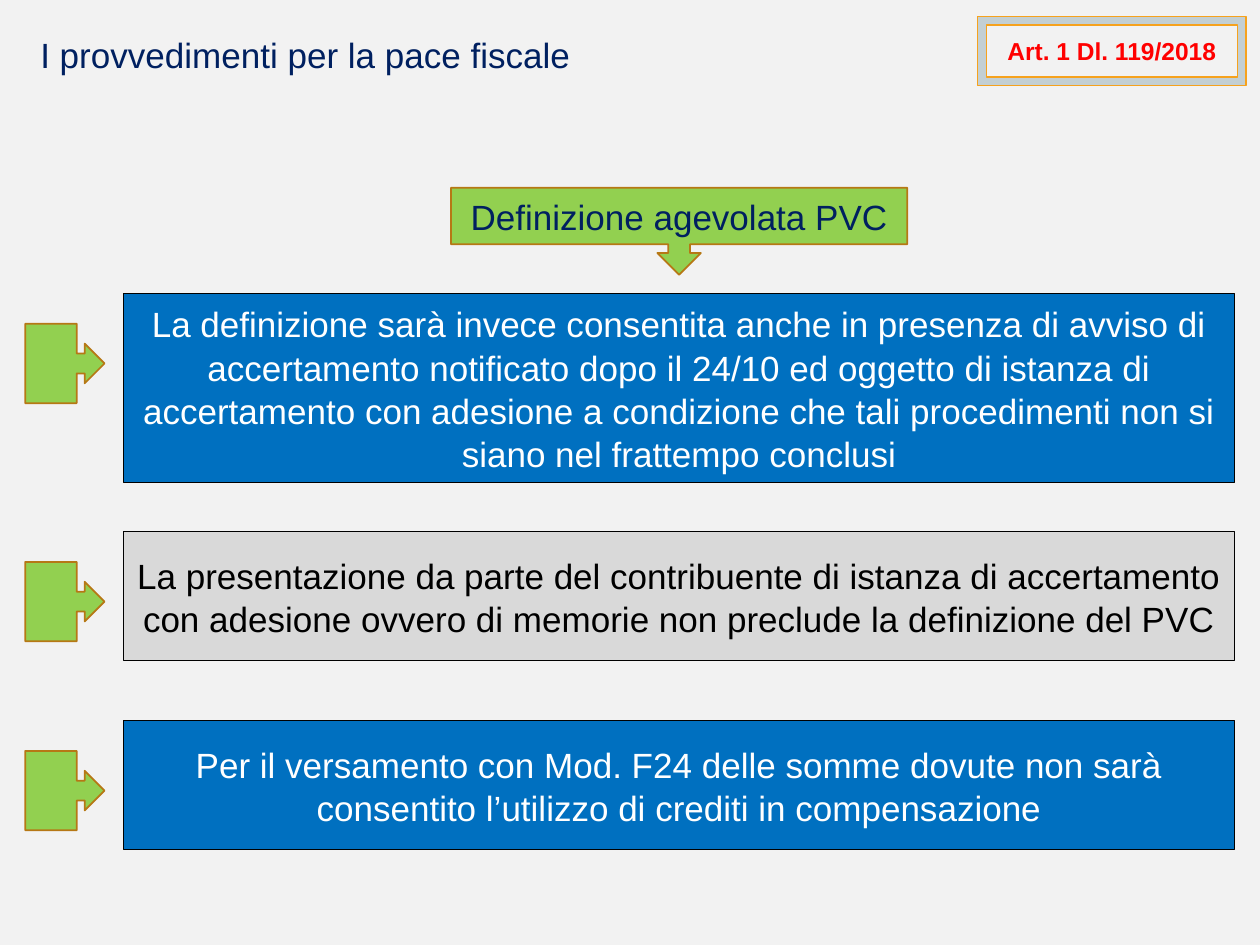
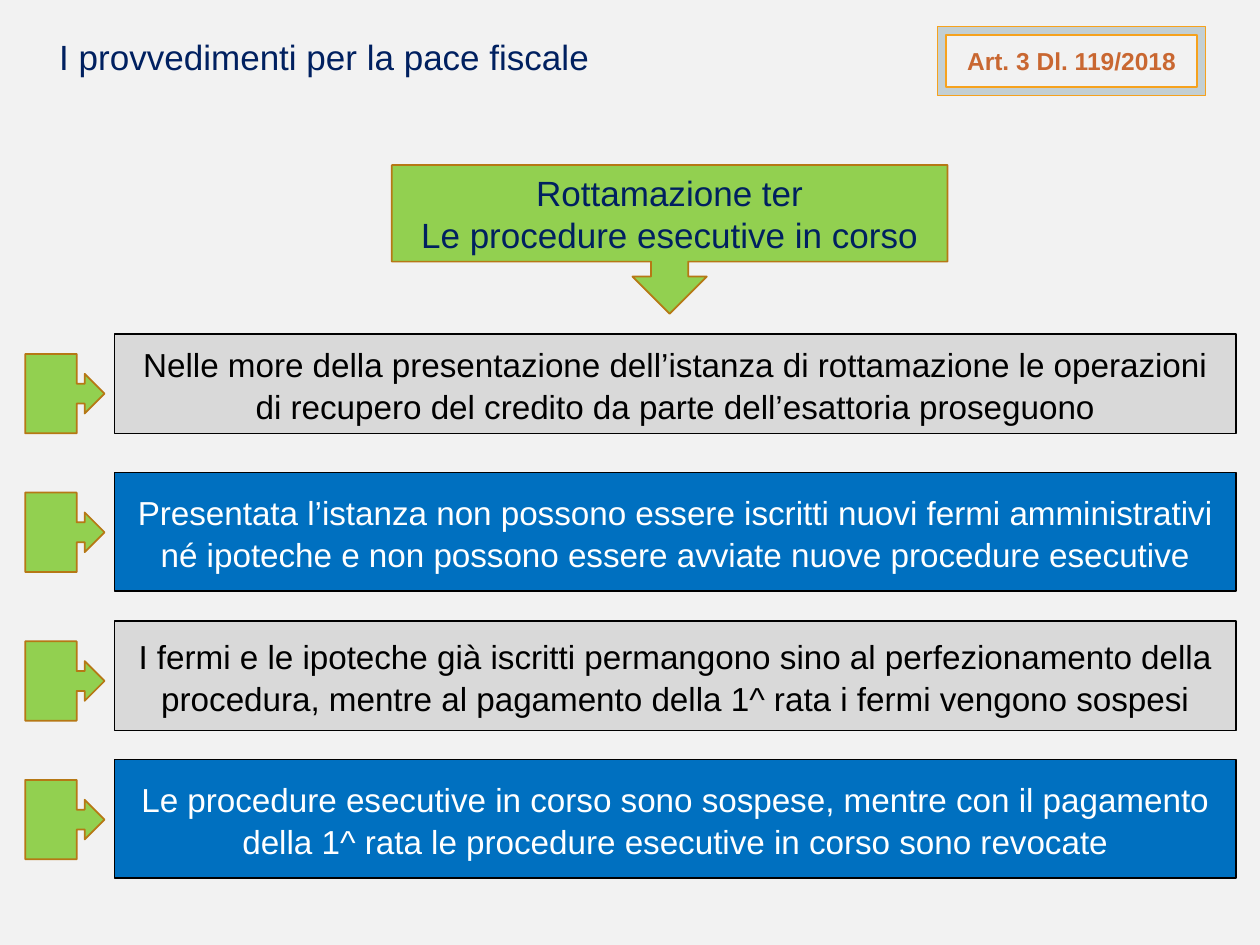
"""Build two slides on the Italian tax settlement measures."""
from dataclasses import dataclass

from pptx import Presentation
from pptx import util as u
from pptx.dml.color import RGBColor
from pptx.enum import shapes, text


@dataclass(frozen=True)
class Theme:
    font: str = "Arial"
    background: str = "F2F2F2"
    navy: str = "002060"
    green: str = "92D050"
    green_edge: str = "B67815"
    frame_fill: str = "C3CFD3"
    frame_edge: str = "F6A21D"
    black: str = "000000"
    red: str = "FF0000"
    rust: str = "C96731"
    blue_panel: tuple[str, str] = ("0070C0", "FFFFFF")
    grey_panel: tuple[str, str] = ("D9D9D9", "000000")
    heading_size: float = 20
    article_size: float = 14
    thin_line: float = 0.75
    callout_line: float = 1


@dataclass(frozen=True)
class Area:
    left: float
    top: float
    width: float
    height: float

    def lengths(self) -> list[u.Inches]:
        return [u.Inches(side) for side in (self.left, self.top, self.width, self.height)]


@dataclass(frozen=True)
class TextStyle:
    size: float
    color: str
    bold: bool = False
    line_spacing: float | None = None
    align: text.PP_ALIGN = text.PP_ALIGN.CENTER


@dataclass(frozen=True)
class Panel:
    top: float
    height: float
    wording: str


@dataclass(frozen=True)
class SlideContent:
    title_left: float
    title_top: float
    article: str
    article_left: float
    article_top: float
    article_color: str
    topic: list[str]
    topic_area: Area
    panel_left: float
    panel_width: float
    panel_size: float
    panel_spacing: float
    panel_styles: list[tuple[str, str]]
    marker_drop: float
    panels: list[Panel]


THEME = Theme()
TITLE = "I provvedimenti per la pace fiscale"
MARKER_LEFT, MARKER_SIDE = 0.2, 0.63

SLIDES = [
    SlideContent(
        title_left=0.2,
        title_top=0.21,
        article="Art. 1 Dl. 119/2018",
        article_left=7.76,
        article_top=0.13,
        article_color=THEME.red,
        topic=["Definizione agevolata PVC"],
        topic_area=Area(3.58, 1.49, 3.62, 0.69),
        panel_left=0.98,
        panel_width=8.82,
        panel_size=20,
        panel_spacing=24.6,
        panel_styles=[THEME.blue_panel, THEME.grey_panel],
        marker_drop=0.24,
        panels=[
            Panel(2.33, 1.5, "La definizione sarà invece consentita anche in presenza di avviso di "
                  "accertamento notificato dopo il 24/10 ed oggetto di istanza di accertamento con "
                  "adesione a condizione che tali procedimenti non si siano nel frattempo conclusi"),
            Panel(4.22, 1.02, "La presentazione da parte del contribuente di istanza di accertamento "
                  "con adesione ovvero di memorie non preclude la definizione del PVC"),
            Panel(5.72, 1.02, "Per il versamento con Mod. F24 delle somme dovute non sarà consentito "
                  "l’utilizzo di crediti in compensazione"),
        ],
    ),
    SlideContent(
        title_left=0.35,
        title_top=0.22,
        article="Art. 3 Dl. 119/2018",
        article_left=7.44,
        article_top=0.21,
        article_color=THEME.rust,
        topic=["Rottamazione ter", "Le procedure esecutive in corso"],
        topic_area=Area(3.11, 1.31, 4.41, 1.18),
        panel_left=0.91,
        panel_width=8.9,
        panel_size=19,
        panel_spacing=24,
        panel_styles=[THEME.grey_panel, THEME.blue_panel],
        marker_drop=0.16,
        panels=[
            Panel(2.65, 0.79, "Nelle more della presentazione dell’istanza di rottamazione le "
                  "operazioni di recupero del credito da parte dell’esattoria proseguono"),
            Panel(3.75, 0.94, "Presentata l’istanza non possono essere iscritti nuovi fermi "
                  "amministrativi né ipoteche e non possono essere avviate nuove procedure esecutive"),
            Panel(4.93, 0.87, "I fermi e le ipoteche già iscritti permangono sino al perfezionamento "
                  "della procedura, mentre al pagamento della 1^ rata i fermi vengono sospesi"),
            Panel(6.03, 0.94, "Le procedure esecutive in corso sono sospese, mentre con il pagamento "
                  "della 1^ rata le procedure esecutive in corso sono revocate"),
        ],
    ),
]


def write(box, lines: list[str], style: TextStyle) -> None:
    frame = box.text_frame
    frame.word_wrap = True
    frame.vertical_anchor = text.MSO_ANCHOR.MIDDLE
    for index, line in enumerate(lines):
        para = frame.add_paragraph() if index else frame.paragraphs[0]
        para.alignment = style.align
        if style.line_spacing:
            para.line_spacing = u.Pt(style.line_spacing)
        span = para.add_run()
        span.text = line
        span.font.name = THEME.font
        span.font.size = u.Pt(style.size)
        span.font.bold = style.bold
        span.font.color.rgb = RGBColor.from_string(style.color)


def add_box(page, kind: shapes.MSO_SHAPE, area: Area, fill: str, edge: str, weight: float):
    box = page.shapes.add_shape(kind, *area.lengths())
    box.shadow.inherit = False
    box.fill.solid()
    box.fill.fore_color.rgb = RGBColor.from_string(fill)
    box.line.color.rgb = RGBColor.from_string(edge)
    box.line.width = u.Pt(weight)
    return box


def add_callout(page, kind: shapes.MSO_SHAPE, area: Area):
    return add_box(page, kind, area, THEME.green, THEME.green_edge, THEME.callout_line)


def place_title(page, left: float, top: float) -> None:
    title = page.shapes.title
    title.left, title.top, title.width, title.height = Area(left, top, 6.22, 0.45).lengths()
    frame = title.text_frame
    frame.auto_size = text.MSO_AUTO_SIZE.SHAPE_TO_FIT_TEXT
    frame.margin_left = frame.margin_right = u.Inches(0.12)
    frame.margin_top = frame.margin_bottom = u.Inches(0.06)
    write(title, [TITLE], TextStyle(THEME.heading_size, THEME.navy, align=text.PP_ALIGN.JUSTIFY))


def add_article(page, content: SlideContent) -> None:
    area = Area(content.article_left, content.article_top, 2.13, 0.55)
    box = add_box(page, shapes.MSO_SHAPE.FRAME, area, THEME.frame_fill, THEME.frame_edge,
                  THEME.thin_line)
    write(box, [content.article], TextStyle(THEME.article_size, content.article_color, bold=True))


def add_panel(page, content: SlideContent, index: int) -> None:
    panel = content.panels[index]
    fill, ink = content.panel_styles[index % len(content.panel_styles)]
    area = Area(content.panel_left, panel.top, content.panel_width, panel.height)
    box = add_box(page, shapes.MSO_SHAPE.RECTANGLE, area, fill, THEME.black, THEME.thin_line)
    style = TextStyle(content.panel_size, ink, line_spacing=content.panel_spacing)
    write(box, [panel.wording], style)
    marker = Area(MARKER_LEFT, panel.top + content.marker_drop, MARKER_SIDE, MARKER_SIDE)
    add_callout(page, shapes.MSO_SHAPE.RIGHT_ARROW_CALLOUT, marker)


def add_slide(deck, content: SlideContent) -> None:
    page = deck.slides.add_slide(deck.slide_layouts.get_by_name("Title Only"))
    place_title(page, content.title_left, content.title_top)
    for index in range(len(content.panels)):
        add_panel(page, content, index)
    topic = add_callout(page, shapes.MSO_SHAPE.DOWN_ARROW_CALLOUT, content.topic_area)
    write(topic, content.topic, TextStyle(THEME.heading_size, THEME.navy))
    add_article(page, content)


def main() -> None:
    deck = Presentation()
    deck.slide_width, deck.slide_height = u.Inches(10), u.Inches(7.5)
    backdrop = deck.slide_master.background.fill
    backdrop.solid()
    backdrop.fore_color.rgb = RGBColor.from_string(THEME.background)
    for content in SLIDES:
        add_slide(deck, content)
    deck.save("out.pptx")


if __name__ == "__main__":
    main()
